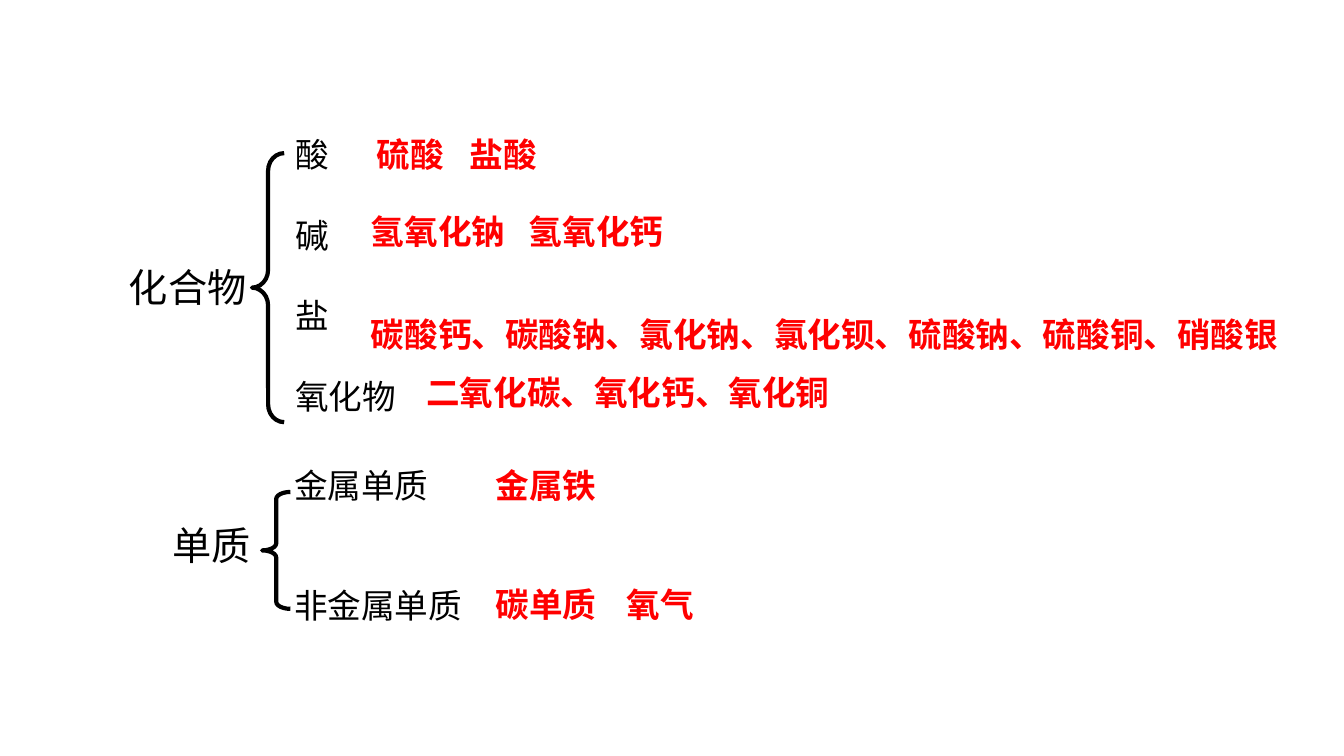
from lxml.etree import SubElement
from pptx import Presentation
from pptx.dml.color import RGBColor
from pptx.enum.shapes import MSO_SHAPE
from pptx.oxml.ns import qn
from pptx.util import Pt

BLACK = RGBColor(0, 0, 0)
RED = RGBColor(255, 0, 0)


def add_tab(para, pos):
    tabs = SubElement(para._p.get_or_add_pPr(), qn("a:tabLst"))
    SubElement(tabs, qn("a:tab"), pos=str(int(Pt(pos))), algn="l")


def add_text(slide, text, box, size=24, color=BLACK, bold=False, gap=0, tab=None, wrap=True):
    frame = slide.shapes.add_textbox(*map(Pt, box)).text_frame
    frame.word_wrap = wrap
    for i, line in enumerate(text.split("\n")):
        para = frame.paragraphs[0] if i == 0 else frame.add_paragraph()
        if i:
            para.space_before = Pt(gap)
        if tab:
            add_tab(para, tab)
        run = para.add_run()
        run.text = line
        font = run.font
        font.name = "Arial"
        font.size = Pt(size)
        font.bold = bold
        font.color.rgb = color


def add_brace(slide, box, curve):
    brace = slide.shapes.add_shape(MSO_SHAPE.LEFT_BRACE, *map(Pt, box))
    brace.shadow.inherit = False
    brace.adjustments[0] = curve
    brace.adjustments[1] = 0.5
    brace.fill.background()
    brace.line.color.rgb = BLACK
    brace.line.width = Pt(3)


def add_answer(slide, text, left, top, width, **style):
    add_text(slide, text, (left, top, width, 36), color=RED, bold=True, **style)


def main():
    deck = Presentation()
    deck.slide_width = Pt(960)
    deck.slide_height = Pt(540)
    slide = deck.slides.add_slide(deck.slide_layouts[6])

    add_text(slide, "化合物", (85, 184.3, 101, 57.6), size=28)
    add_text(slide, "金属单质\n非金属单质", (203, 328.3, 257, 90.7), gap=57.2)
    add_brace(slide, (187.2, 351.4, 20.2, 83.5), 0.25)
    add_text(slide, "酸\n碱\n盐\n氧化物", (203.8, 92.2, 173.5, 164.2), gap=28.7)
    add_brace(slide, (180, 109.4, 23, 192.2), 0.55)

    add_answer(slide, "金属铁", 347, 328.3, 87.8, wrap=False)
    add_answer(slide, "碳单质\t氧气", 347, 413.3, 185, tab=93.6)
    add_answer(slide, "二氧化碳、氧化钙、氧化铜", 297.4, 262.1, 332)
    add_answer(slide, "硫酸", 262.1, 92.2, 128.2)
    add_answer(slide, "盐酸", 328.3, 92.2, 172.8)
    add_answer(slide, "氢氧化钠\t氢氧化钙", 257.8, 146.9, 247, tab=113)
    add_answer(slide, "碳酸钙、碳酸钠、氯化钠、氯化钡、硫酸钠、硫酸铜、硝酸银", 257.8, 221, 666.7)
    add_text(slide, "单质", (116, 368.6, 71.3, 48.2), size=28)

    deck.save("out.pptx")


if __name__ == "__main__":
    main()
